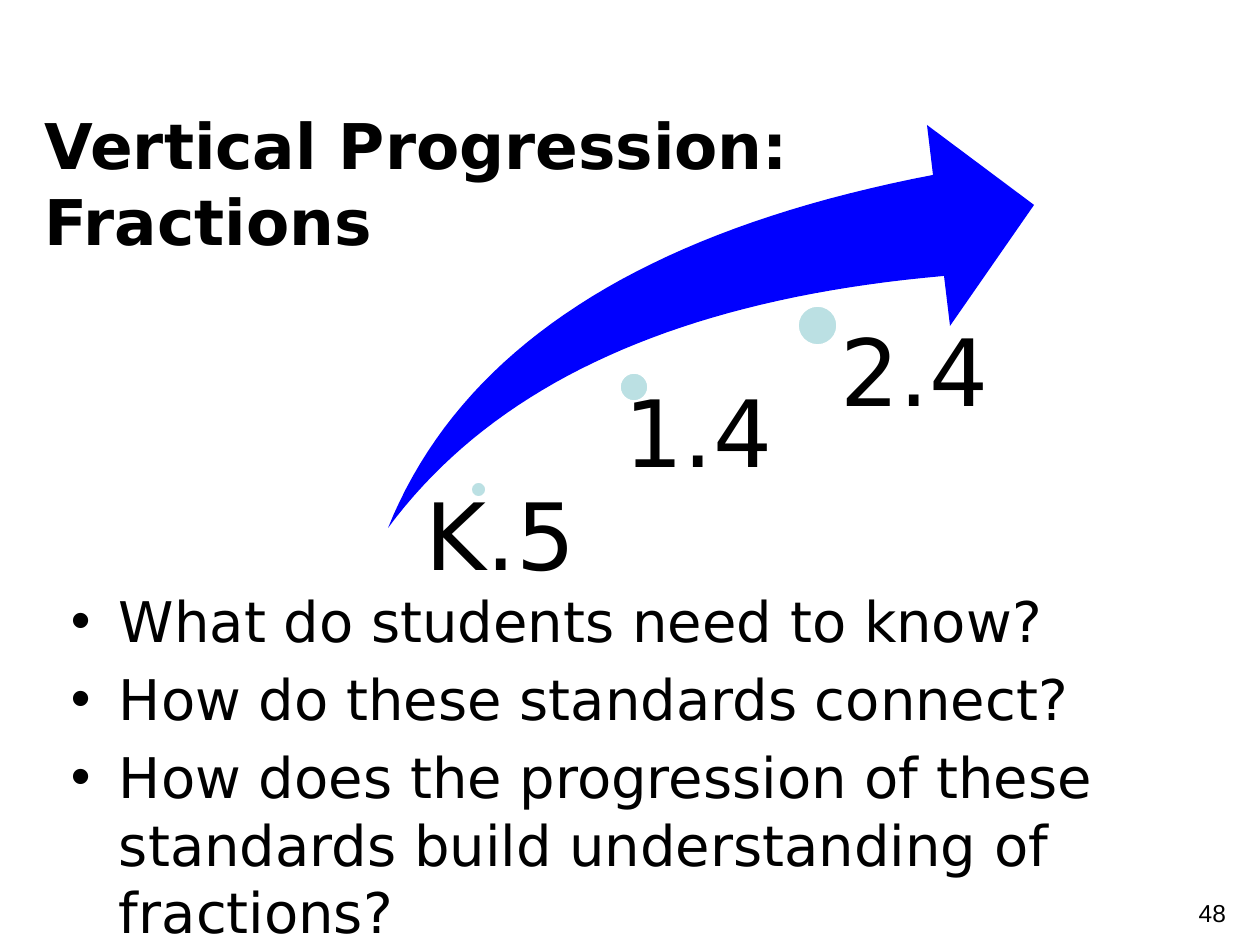
from lxml.etree import SubElement
from pptx import Presentation
from pptx.dml.color import RGBColor
from pptx.enum.shapes import MSO_SHAPE
from pptx.enum.text import MSO_ANCHOR, PP_ALIGN
from pptx.oxml.ns import qn
from pptx.util import Pt

PX = 914400 / 126


def color(hex_value):
    return RGBColor.from_string(hex_value)


def add_text(box, lines, size, font="DejaVu Sans", bold=False, spacing=None,
             insets=(13, 6, 13, 6), anchor=MSO_ANCHOR.TOP, align=PP_ALIGN.LEFT,
             bullet=False):
    left, top, width, height = [round(value * PX) for value in box]
    frame = slide.shapes.add_textbox(left, top, width, height).text_frame
    frame.word_wrap = True
    frame.vertical_anchor = anchor
    (frame.margin_left, frame.margin_top,
     frame.margin_right, frame.margin_bottom) = [round(value * PX) for value in insets]
    for index, line in enumerate(lines):
        paragraph = frame.add_paragraph() if index else frame.paragraphs[0]
        paragraph.text = line
        paragraph.alignment = align
        paragraph.line_spacing = spacing
        if bullet:
            if index:
                paragraph.space_before = Pt(6.4)
            properties = paragraph._p.get_or_add_pPr()
            properties.set("marL", str(round(48 * PX)))
            properties.set("indent", str(round(-48 * PX)))
            SubElement(properties, qn("a:buFont"), typeface="Arial")
            SubElement(properties, qn("a:buChar"), char="•")
        paragraph.font.name = font
        paragraph.font.size = Pt(size)
        paragraph.font.bold = bold
        paragraph.font.color.rgb = color("000000")


presentation = Presentation()
presentation.slide_width = round(1260 * PX)
presentation.slide_height = round(945 * PX)
slide = presentation.slides.add_slide(presentation.slide_layouts[6])

# Guiding questions
questions = [
    "What do students need to know?",
    "How do these standards connect?",
    "How does the progression of these standards build understanding of fractions?",
]
add_text((58, 580, 1134, 360), questions, 32, bullet=True)

# Slide number
add_text((945, 892, 294, 66), ["48"], 14, font="Arial", align=PP_ALIGN.RIGHT)

# Swoosh arrow: two Bezier edges drawn as short segments, joined by the head
upper_edge = [(388, 528), (460, 349), (641, 231), (933, 175)]
arrow_head = [(927, 125), (1034, 205), (950, 326)]
lower_edge = [(944, 276), (682, 299), (496, 382), (388, 528)]
STEPS = 40
curves = []
for edge in (upper_edge, lower_edge):
    points = []
    for step in range(STEPS + 1):
        t = step / STEPS
        weights = ((1 - t) ** 3, 3 * t * (1 - t) ** 2, 3 * t ** 2 * (1 - t), t ** 3)
        points.append(tuple(
            round(sum(weight * point[axis] for weight, point in zip(weights, edge)) * PX)
            for axis in (0, 1)))
    curves.append(points)
head = [(round(x * PX), round(y * PX)) for x, y in arrow_head]
outline = curves[0] + head + curves[1]
builder = slide.shapes.build_freeform(*outline[0], scale=1.0)
builder.add_line_segments(outline[1:], close=True)
arrow = builder.convert_to_shape()
arrow.shadow.inherit = False
arrow.fill.solid()
arrow.fill.fore_color.rgb = color("0000FF")
arrow.line.fill.background()

# Standards along the arrow: dot (left, top, diameter), label box, left inset
standards = [
    ("K.5", (470, 481, 17), (417, 490, 239, 116), 9),
    ("1.4", (619, 372, 30), (609, 387, 252, 219), 16),
    ("2.4", (797, 305, 41), (818, 326, 239, 280), 23),
]
for label, (left, top, diameter), box, inset in standards:
    dot = slide.shapes.add_shape(
        MSO_SHAPE.OVAL, round(left * PX), round(top * PX),
        round(diameter * PX), round(diameter * PX))
    dot.shadow.inherit = False
    dot.fill.solid()
    dot.fill.fore_color.rgb = color("BBE0E3")
    dot.line.color.rgb = color("FFFFFF")
    dot.line.width = Pt(2)
    add_text(box, [label], 53, spacing=0.9, insets=(inset, 0, 0, 0))

# Title
add_text((32, 103, 1134, 158), ["Vertical Progression:", "Fractions"], 36,
         bold=True, anchor=MSO_ANCHOR.MIDDLE)

presentation.save("out.pptx")
